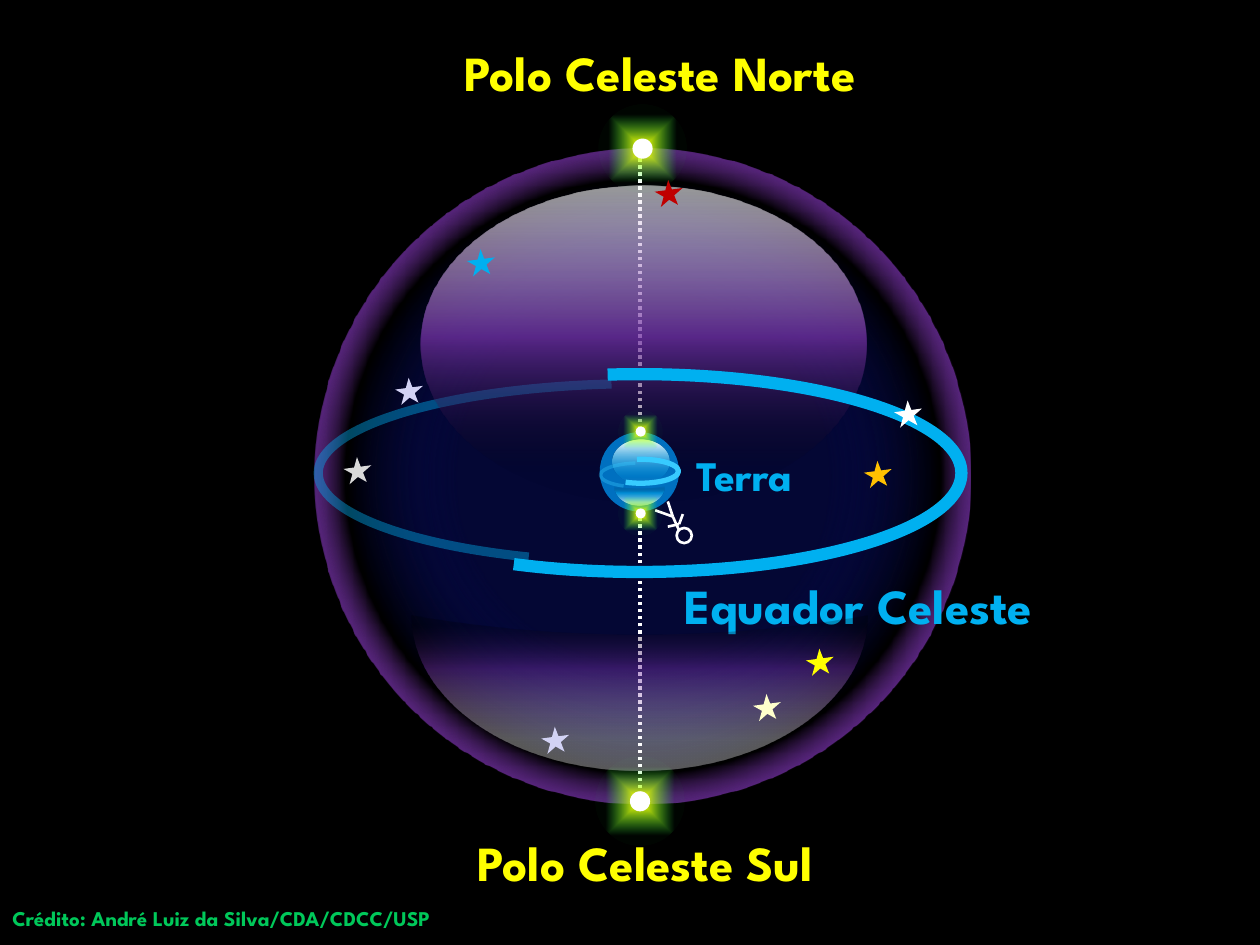
from lxml.etree import SubElement
from pptx import Presentation
from pptx.dml.color import RGBColor
from pptx.enum.dml import MSO_LINE
from pptx.enum.shapes import MSO_CONNECTOR, MSO_SHAPE
from pptx.enum.text import MSO_ANCHOR, MSO_AUTO_SIZE, PP_ALIGN
from pptx.oxml.ns import qn
from pptx.util import Inches, Pt

FONT = "League Spartan"
BLACK = RGBColor(0x00, 0x00, 0x00)
WHITE = RGBColor(0xFF, 0xFF, 0xFF)
YELLOW = RGBColor(0xFF, 0xFF, 0x00)
GREEN = RGBColor(0x00, 0xC8, 0x5A)
GLOW_GREEN = RGBColor(0x21, 0xFF, 0x46)
SKY = RGBColor(0x00, 0xB0, 0xF0)
PALE_SKY = RGBColor(0x37, 0xCB, 0xFF)
MINT = RGBColor(0xC2, 0xFF, 0xF0)
OCEAN = RGBColor(0x00, 0x70, 0xC0)
NAVY = RGBColor(0x0A, 0x12, 0x8C)
VIOLET = RGBColor(0x87, 0x3A, 0xC0)
PURPLE = RGBColor(0x70, 0x30, 0xA0)
LILAC = RGBColor(0xD2, 0xD2, 0xF4)
RED = RGBColor(0xC0, 0x00, 0x00)
GREY = RGBColor(0xD9, 0xD9, 0xD9)
AMBER = RGBColor(0xFF, 0xC0, 0x00)
CREAM = RGBColor(0xFF, 0xFF, 0xCC)


def set_gradient(sp, stops, angle=0, path=None):
    """Fill a shape with (position, colour, opacity) stops, linear or from its centre."""
    sp.fill.gradient()
    grad = sp._element.spPr.find(qn("a:gradFill"))
    for child in list(grad):
        grad.remove(child)
    grad.set("rotWithShape", "1")
    gs_list = SubElement(grad, qn("a:gsLst"))
    for pos, color, opacity in stops:
        gs = SubElement(gs_list, qn("a:gs"), pos=str(pos * 1000))
        clr = SubElement(gs, qn("a:srgbClr"), val=str(color))
        SubElement(clr, qn("a:alpha"), val=str(opacity * 1000))
    if path:
        focus = SubElement(grad, qn("a:path"), path=path)
        SubElement(focus, qn("a:fillToRect"), l="50000", t="50000", r="50000", b="50000")
    else:
        SubElement(grad, qn("a:lin"), ang=str(angle * 60000), scaled="0")


def add_shape(shapes, kind, left, top, width, height, color=None, rotation=0):
    """Add a borderless shape, solid when a colour is given."""
    sp = shapes.add_shape(kind, Inches(left), Inches(top), Inches(width), Inches(height))
    sp.shadow.inherit = False
    sp.rotation = rotation
    sp.line.fill.background()
    if color is None:
        sp.fill.background()
    else:
        sp.fill.solid()
        sp.fill.fore_color.rgb = color
    return sp


def add_arc(shapes, box, angles, color, weight, opacity=100):
    """Add half of a ring lying on its side, between two angles in degrees."""
    sp = add_shape(shapes, MSO_SHAPE.ARC, *box, rotation=90)
    for i, angle in enumerate(angles):
        sp.adjustments[i] = angle * 0.6
    sp.line.color.rgb = color
    sp.line.width = Pt(weight)
    if opacity < 100:
        clr = sp.line._ln.find(".//" + qn("a:srgbClr"))
        SubElement(clr, qn("a:alpha"), val=str(opacity * 1000))


def add_line(shapes, start, end, weight, dash=None):
    """Add a white straight line."""
    x1, y1, x2, y2 = (Inches(v) for v in (*start, *end))
    cxn = shapes.add_connector(MSO_CONNECTOR.STRAIGHT, x1, y1, x2, y2)
    cxn.line.color.rgb = WHITE
    cxn.line.width = Pt(weight)
    if dash:
        cxn.line.dash_style = dash
    SubElement(cxn._element.spPr, qn("a:effectLst"))


def write_label(sp, text, size, color, align=PP_ALIGN.CENTER):
    """Write one bold line of text in a text box or placeholder."""
    tf = sp.text_frame
    tf.word_wrap = True
    tf.auto_size = MSO_AUTO_SIZE.SHAPE_TO_FIT_TEXT
    tf.vertical_anchor = MSO_ANCHOR.TOP
    p = tf.paragraphs[0]
    p.alignment = align
    r = p.add_run()
    r.text = text
    r.font.name = FONT
    r.font.size = Pt(size)
    r.font.bold = True
    r.font.color.rgb = color


def add_label(s, box, *style):
    """Add a text box holding one label."""
    write_label(s.shapes.add_textbox(*(Inches(v) for v in box)), *style)


def add_sphere(s, left, top, size):
    """Draw the celestial sphere, the far half of its equator, its axis and upper sheen."""
    ball = add_shape(s.shapes, MSO_SHAPE.OVAL, left, top, size, size)
    set_gradient(ball, [(40, NAVY, 37), (64, BLACK, 100), (71, VIOLET, 65)], path="circle")
    add_arc(s.shapes, (left + 1.87, top + 0.02, 1.42, 5.11), (53.01, 162.19), SKY, 5.25, 42)
    axis = left + 2.58
    add_line(s.shapes, (axis, top + 5.19), (axis, top + 0.07), 2, MSO_LINE.ROUND_DOT)
    sheen = add_shape(s.shapes, MSO_SHAPE.OVAL, left + 0.84, top + 0.29, 3.54, 2.52)
    set_gradient(sheen, [(2, WHITE, 58), (48, PURPLE, 77), (91, BLACK, 2)], 90)


def add_crescent(shapes, box, stops):
    """Draw the lower sheen of a sphere."""
    sp = add_shape(shapes, MSO_SHAPE.MOON, *box, rotation=270)
    sp.adjustments[0] = 0.875
    set_gradient(sp, stops)


def add_earth(s, left, top, size):
    """Draw the Earth with its two highlights."""
    shapes = s.shapes.add_group_shape().shapes
    add_shape(shapes, MSO_SHAPE.OVAL, left, top, size, size, OCEAN)
    sheen = add_shape(shapes, MSO_SHAPE.OVAL, left + 0.1, top + 0.06, 0.45, 0.35)
    set_gradient(sheen, [(3, WHITE, 100), (85, SKY, 12), (100, MINT, 0)], 90)
    add_crescent(shapes, (left + 0.24, top + 0.31, 0.15, 0.39),
                 [(19, WHITE, 70), (66, SKY, 44), (100, BLACK, 0)])


def add_pole(s, left, top, size, dot):
    """Draw a glowing pole with a white dot at its centre."""
    shapes = s.shapes.add_group_shape().shapes
    glow = add_shape(shapes, MSO_SHAPE.OVAL, left, top, size, size)
    set_gradient(glow, [(7, YELLOW, 100), (77, GLOW_GREEN, 2)], path="shape")
    inset = (size - dot) / 2
    add_shape(shapes, MSO_SHAPE.OVAL, left + inset, top + inset, dot, dot, WHITE)


def add_observer(s, left, top):
    """Draw the stick figure standing on the Earth."""
    shapes = s.shapes.add_group_shape().shapes
    head = add_shape(shapes, MSO_SHAPE.OVAL, left + 0.17, top + 0.21, 0.12, 0.12)
    head.line.color.rgb = WHITE
    head.line.width = Pt(1.5)
    neck, hip, elbow = (0.19, 0.23), (0.14, 0.12), (0.19, 0.18)
    limbs = [(neck, hip), (hip, (0, 0.07)), (hip, (0.1, 0)),
             (elbow, (0.1, 0.2)), ((0.22, 0.1), elbow)]
    for start, end in limbs:
        add_line(shapes, (left + start[0], top + start[1]), (left + end[0], top + end[1]), 1.5)


def add_stars(s, stars):
    """Scatter small stars, each given as left, top and colour."""
    shapes = s.shapes.add_group_shape().shapes
    for left, top, color in stars:
        add_shape(shapes, MSO_SHAPE.STAR_5_POINT, left, top, 0.23, 0.2, color, 138.8)


def main():
    """Build the celestial sphere slide."""
    prs = Presentation()
    prs.slide_width, prs.slide_height = Inches(10), Inches(7.5)
    s = prs.slides.add_slide(prs.slide_layouts[5])
    s.background.fill.solid()
    s.background.fill.fore_color.rgb = BLACK

    title = s.shapes.title
    title.left, title.top = Inches(3.35), Inches(0.29)
    title.width, title.height = Inches(3.78), Inches(0.57)
    write_label(title, "Polo Celeste Norte", 28, YELLOW)

    add_sphere(s, 2.5, 1.18, 5.2)
    add_pole(s, 4.73, 6.01, 0.7, 0.16)
    add_label(s, (4.92, 4.52, 3.78, 0.57), "Equador Celeste", 28, SKY)
    add_crescent(s.shapes, (4.46, 3.69, 1.23, 3.62),
                 [(19, WHITE, 35), (66, PURPLE, 47), (94, BLACK, 22)])
    add_earth(s, 4.76, 3.43, 0.63)
    add_label(s, (4.53, 3.52, 2.76, 0.5), "Terra", 24, SKY)
    add_arc(s.shapes, (4.29, 1.2, 1.57, 5.11), (162.06, 54.09), SKY, 7)
    add_observer(s, 5.2, 3.98)
    add_stars(s, [
        (7.1, 3.2, WHITE), (3.14, 3.02, LILAC), (5.2, 1.45, RED),
        (3.71, 2, SKY), (2.73, 3.65, GREY), (4.3, 5.79, LILAC),
        (6.86, 3.68, AMBER), (6.4, 5.17, YELLOW), (5.98, 5.53, CREAM),
    ])
    add_arc(s.shapes, (4.99, 3.44, 0.19, 0.6), (162.66, 54.09), PALE_SKY, 3)
    add_arc(s.shapes, (4.98, 3.46, 0.19, 0.62), (55.39, 160.98), PALE_SKY, 2, 35)
    add_label(s, (2.96, 6.56, 4.32, 0.57), "Polo Celeste Sul", 28, YELLOW)
    add_label(s, (0, 7.14, 10.28, 0.3), "Crédito: André Luiz da Silva/CDA/CDCC/USP",
              12, GREEN, PP_ALIGN.LEFT)
    add_pole(s, 4.75, 0.83, 0.7, 0.16)
    for top in (3.25, 3.9):
        add_pole(s, 4.91, top, 0.35, 0.08)
    prs.save("out.pptx")


if __name__ == "__main__":
    main()
